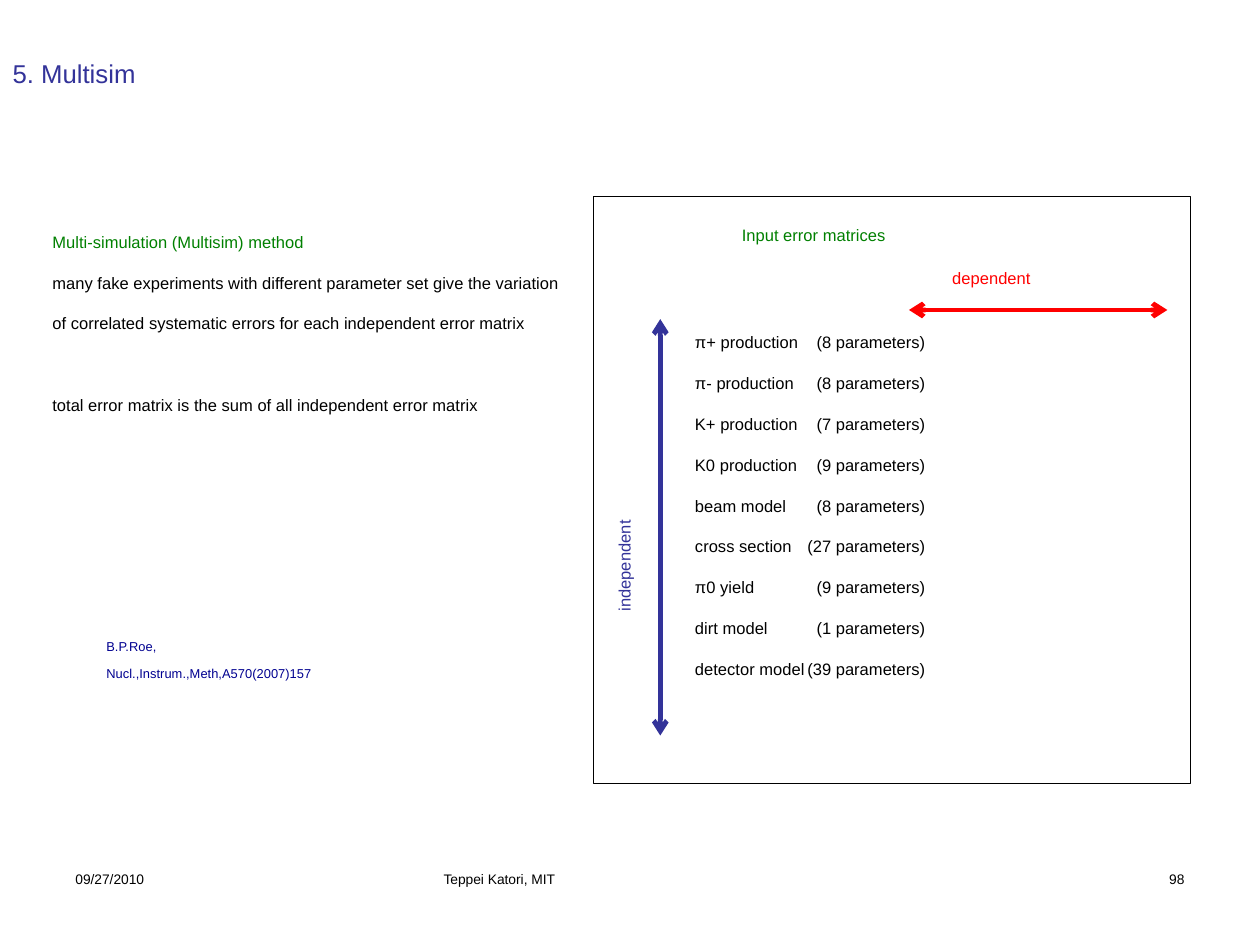
"""Build the Multisim slide with its list of input error matrices."""
import pptx
import pptx.util
import pptx.dml.color
import pptx.enum.text
import pptx.enum.shapes
from lxml import etree
from pptx.oxml.ns import qn

Pt = pptx.util.Pt
ALIGN = pptx.enum.text.PP_ALIGN


def color(value):
    return pptx.dml.color.RGBColor.from_string(value)


def write(box, lines, left, top, width, height, size=18, ink="000000", align=ALIGN.LEFT,
          spacing=1.0, inset=(7.2, 3.6), anchor=pptx.enum.text.MSO_ANCHOR.TOP, tab=None):
    box.left, box.top, box.width, box.height = Pt(left), Pt(top), Pt(width), Pt(height)
    frame = box.text_frame
    frame.word_wrap = True
    frame.auto_size = pptx.enum.text.MSO_AUTO_SIZE.NONE
    frame.vertical_anchor = anchor
    frame.margin_left = frame.margin_right = Pt(inset[0])
    frame.margin_top = frame.margin_bottom = Pt(inset[1])
    frame.text = "\n".join(lines)
    for paragraph in frame.paragraphs:
        paragraph.alignment = align
        paragraph.line_spacing = spacing
        if tab:
            stops = etree.SubElement(paragraph._p.get_or_add_pPr(), qn("a:tabLst"))
            etree.SubElement(stops, qn("a:tab"), pos=str(Pt(tab)), algn="r")
        for run in paragraph.runs:
            run.font.name = "Arial"
            run.font.size = Pt(size)
            run.font.color.rgb = color(ink)
            run._r.get_or_add_rPr().set("baseline", "30000")
    return box


deck = pptx.Presentation()
deck.slide_width, deck.slide_height = Pt(793.44), Pt(595.44)
slide = deck.slides.add_slide(deck.slide_layouts[5])
shapes = slide.shapes
wide_inset = (7.92, 4.32)

write(shapes.title, ["5. Multisim"], 0, 0, 793.44, 99.36, size=28, ink="333399",
      inset=wide_inset, anchor=pptx.enum.text.MSO_ANCHOR.MIDDLE)

for footer, left, width, align in [
    ("09/27/2010", 39.6, 185, ALIGN.LEFT),
    ("Teppei Katori, MIT", 271.44, 251.3, ALIGN.LEFT),
    ("98", 568.8, 185, ALIGN.RIGHT),
]:
    write(shapes.add_textbox(0, 0, 0, 0), [footer], left, 542.16, width, 41,
          size=15, align=align, inset=wide_inset)

method = write(shapes.add_textbox(0, 0, 0, 0), [
    "Multi-simulation (Multisim) method",
    "many fake experiments with different parameter set give the variation "
    "of correlated systematic errors for each independent error matrix",
    "total error matrix is the sum of all independent error matrix",
], 25.92, 136.08, 339, 213.84, spacing=1.19)
heading, _, conclusion = method.text_frame.paragraphs
heading.runs[0].font.color.rgb = color("008000")
conclusion.space_before = Pt(25.7)

matrices = [
    ("π+ production", 8), ("π- production", 8), ("K+ production", 7),
    ("K0 production", 9), ("beam model", 8), ("cross section", 27),
    ("π0 yield", 9), ("dirt model", 1), ("detector model", 39),
]
write(shapes.add_textbox(0, 0, 0, 0),
      [f"{source}\t({count} parameters)" for source, count in matrices],
      430.56, 199.44, 324.7, 239.8, spacing=1.19, tab=145)

write(shapes.add_textbox(0, 0, 0, 0), ["Input error matrices"],
      460.08, 136.08, 172, 28.8, ink="008000")
write(shapes.add_textbox(0, 0, 0, 0), ["dependent"],
      592.56, 159.12, 113.8, 32.4, ink="FF0000", spacing=1.19)
independent = write(shapes.add_textbox(0, 0, 0, 0), ["independent"],
                    328.32, 311.04, 129.6, 32.4, ink="333399", spacing=1.19)
independent.rotation = 270

for ink, ends in [("FF0000", (572.4, 195.12, 735.12, 195.12)),
                  ("333399", (415.8, 462.96, 415.8, 200.88))]:
    arrow = shapes.add_connector(pptx.enum.shapes.MSO_CONNECTOR.STRAIGHT, *map(Pt, ends))
    arrow.line.color.rgb = color(ink)
    arrow.line.width = Pt(3)
    outline = arrow.line._get_or_add_ln()
    for end in ("a:headEnd", "a:tailEnd"):
        etree.SubElement(outline, qn(end), type="arrow")
    etree.SubElement(arrow._element.spPr, qn("a:effectLst"))

frame_box = shapes.add_shape(pptx.enum.shapes.MSO_SHAPE.RECTANGLE,
                             Pt(373.68), Pt(123.84), Pt(375.84), Pt(369.36))
frame_box.shadow.inherit = False
frame_box.fill.background()
frame_box.line.color.rgb = color("000000")
frame_box.line.width = Pt(0.75)

write(shapes.add_textbox(0, 0, 0, 0), ["B.P.Roe,", "Nucl.,Instrum.,Meth,A570(2007)157"],
      59.04, 396, 239, 41.8, size=14, ink="000090", inset=wide_inset)

deck.save("out.pptx")
